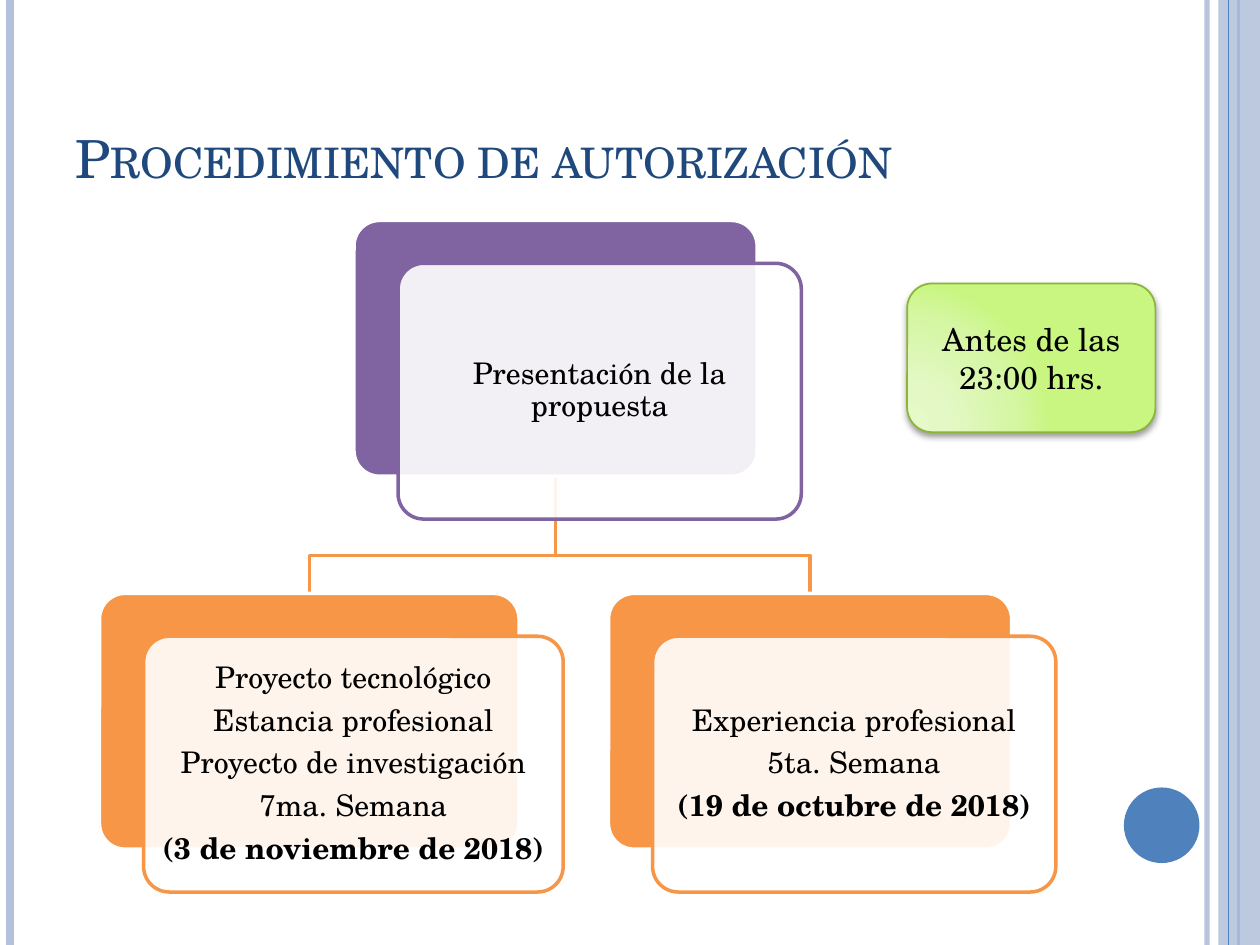
from pptx import Presentation
from pptx.dml.color import RGBColor
from pptx.enum import shapes, text
from pptx.oxml import parse_xml
from pptx.oxml.ns import nsdecls, qn
from pptx.util import Inches, Pt

FONT = "TeX Gyre Schola"
WHITE = RGBColor(0xFF, 0xFF, 0xFF)
BLACK = RGBColor(0x00, 0x00, 0x00)
NAVY = RGBColor(0x1F, 0x49, 0x7D)
BLUE = RGBColor(0x4F, 0x81, 0xBD)
PALE_BLUE = RGBColor(0xB3, 0xC1, 0xDB)
PURPLE = RGBColor(0x80, 0x64, 0xA2)
ORANGE = RGBColor(0xF7, 0x96, 0x46)
GREEN = RGBColor(0x8C, 0xB5, 0x37)
NOTE_STOPS = [(0, "E5F9C9"), (30, "E3F8C4"), (75, "D5F6A3"), (100, "C8F680")]

TITLE = "Procedimiento de autorización"
NOTE = "Antes de las 23:00 hrs."
# Left, top, width, colour, plain lines, bold lines; the first card is the parent
CARDS = [
    (2.81, 1.75, 3.2, PURPLE, ["Presentación de la propuesta"], []),
    (0.79, 4.71, 3.33, ORANGE,
     ["Proyecto tecnológico", "Estancia profesional",
      "Proyecto de investigación", "7ma. Semana"],
     ["(3 de noviembre de 2018)"]),
    (4.83, 4.71, 3.2, ORANGE, ["Experiencia profesional", "5ta. Semana"],
     ["(19 de octubre de 2018)"]),
]
CARD_H = 2.03
CARD_SHIFT = 0.35
BRANCH_Y = 4.41
# x, colour, width in points, opacity in percent
RULES_BEHIND = [(9.58, PALE_BLUE, 3, 93), (0.08, PALE_BLUE, 4.5, 100),
                (9.83, BLUE, 1.5, 100)]
RULES_FRONT = [(9.75, BLUE, 0.75, 100)]


def set_alpha(parent, percent):
    color = parent.find(".//" + qn("a:srgbClr"))
    color.append(parse_xml(f'<a:alpha {nsdecls("a")} val="{percent * 1000}"/>'))


def add_rule(slide, x, color, width, opacity):
    rule = slide.shapes.add_connector(
        shapes.MSO_CONNECTOR.STRAIGHT, Inches(x), 0, Inches(x), Inches(7.5))
    rule.line.color.rgb = color
    rule.line.width = Pt(width)
    if opacity < 100:
        set_alpha(rule.line._get_or_add_ln(), opacity)
    rule._element.spPr.append(parse_xml(f'<a:effectLst {nsdecls("a")}/>'))


def add_box(slide, kind, box, fill, line=None, width=2, opacity=100, adj=None):
    s = slide.shapes.add_shape(kind, *map(Inches, box))
    s.shadow.inherit = False
    s.fill.solid()
    s.fill.fore_color.rgb = fill
    if opacity < 100:
        set_alpha(s._element.spPr, opacity)
    if line is None:
        s.line.fill.background()
    else:
        s.line.color.rgb = line
        s.line.width = Pt(width)
    if adj is not None:
        s.adjustments[0] = adj
    return s


def write(s, lines, bold_lines=(), size=17, color=BLACK, inset=None,
          align=text.PP_ALIGN.CENTER, anchor=text.MSO_ANCHOR.MIDDLE,
          spacing=None, after=None, small_caps=False):
    tf = s.text_frame
    tf.word_wrap = True
    tf.vertical_anchor = anchor
    if inset is not None:
        tf.margin_left = tf.margin_right = Inches(inset)
        tf.margin_top = tf.margin_bottom = Inches(inset)
    for i, line in enumerate([*lines, *bold_lines]):
        p = tf.add_paragraph() if i else tf.paragraphs[0]
        p.alignment = align
        if spacing is not None:
            p.line_spacing = spacing
        if after is not None:
            p.space_after = Pt(after)
        r = p.add_run()
        r.text = line
        r.font.name = FONT
        r.font.size = Pt(size)
        r.font.color.rgb = color
        r.font.bold = i >= len(lines)
        if small_caps:
            r.font._element.set("cap", "small")


def add_branch(slide, parent, child):
    """Draw the elbow from the parent's bottom centre to the child's top centre."""
    x1, y1 = parent[0] + parent[2] / 2, parent[1] + CARD_H
    x2, y2 = child[0] + child[2] / 2, child[1]
    builder = slide.shapes.build_freeform(Inches(x1), Inches(y1))
    builder.add_line_segments(
        [(Inches(x), Inches(y)) for x, y in
         ((x1, BRANCH_Y), (x2, BRANCH_Y), (x2, y2))], close=False)
    s = builder.convert_to_shape()
    s.shadow.inherit = False
    s.fill.background()
    s.line.color.rgb = ORANGE
    s.line.width = Pt(2)


def add_card(slide, left, top, width, color, lines, bold_lines):
    rounded = shapes.MSO_SHAPE.ROUNDED_RECTANGLE
    add_box(slide, rounded, (left, top, width, CARD_H), color, WHITE, adj=0.1)
    front = add_box(slide, rounded,
                    (left + CARD_SHIFT, top + CARD_SHIFT - 0.01, width, CARD_H),
                    WHITE, color, opacity=90, adj=0.1)
    write(front, lines, bold_lines, inset=0.07, spacing=0.9, after=6)


def add_note(slide):
    note = add_box(slide, shapes.MSO_SHAPE.ROUNDED_RECTANGLE,
                   (7.2, 2.25, 1.97, 1.18), WHITE, GREEN, width=1)
    stops = "".join(f'<a:gs pos="{pos * 1000}"><a:srgbClr val="{rgb}"/></a:gs>'
                    for pos, rgb in NOTE_STOPS)
    spPr = note._element.spPr
    spPr.replace(spPr.find(qn("a:solidFill")), parse_xml(
        f'<a:gradFill {nsdecls("a")} rotWithShape="1"><a:gsLst>{stops}</a:gsLst>'
        '<a:path path="circle"><a:fillToRect l="5000" t="100000" r="120000" '
        'b="10000"/></a:path></a:gradFill>'))
    spPr.find(qn("a:effectLst")).append(parse_xml(
        f'<a:outerShdw {nsdecls("a")} blurRad="{Pt(4)}" dist="{Pt(2)}" '
        'dir="5400000" rotWithShape="0"><a:srgbClr val="000000">'
        '<a:alpha val="40000"/></a:srgbClr></a:outerShdw>'))
    write(note, [NOTE], size=18)


def main():
    prs = Presentation()
    prs.slide_width, prs.slide_height = Inches(10), Inches(7.5)
    slide = prs.slides.add_slide(prs.slide_layouts[6])

    for rule in RULES_BEHIND:
        add_rule(slide, *rule)
    add_box(slide, shapes.MSO_SHAPE.RECTANGLE, (9.67, 0, 0.33, 7.5),
            PALE_BLUE, opacity=87)
    for rule in RULES_FRONT:
        add_rule(slide, *rule)
    add_box(slide, shapes.MSO_SHAPE.OVAL, (8.92, 6.25, 0.6, 0.6), BLUE)

    title = slide.shapes.add_textbox(*map(Inches, (0.5, 0.3, 8.17, 1.25)))
    write(title, [TITLE], size=30, color=NAVY, align=text.PP_ALIGN.LEFT,
          anchor=text.MSO_ANCHOR.BOTTOM, small_caps=True)

    parent, *children = CARDS
    for child in reversed(children):
        add_branch(slide, parent, child)
    for card in CARDS:
        add_card(slide, *card)
    add_note(slide)
    prs.save("out.pptx")


if __name__ == "__main__":
    main()
